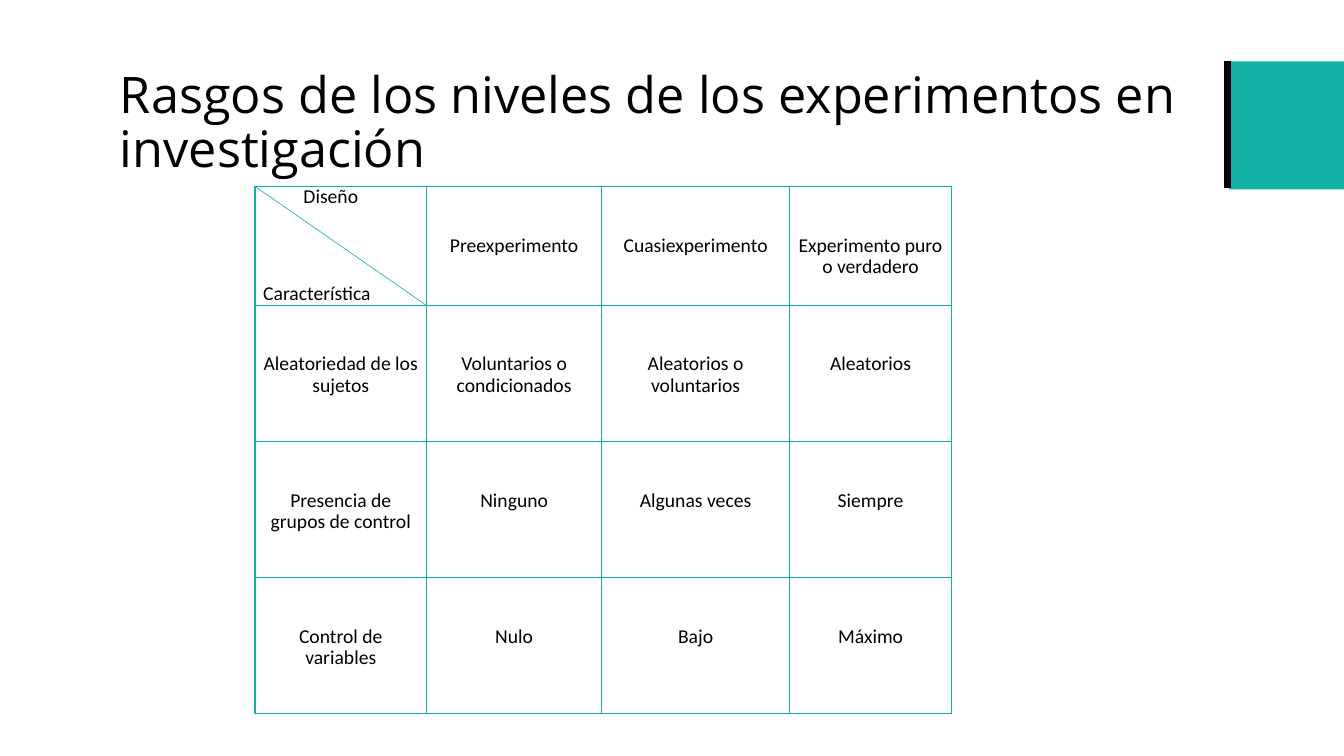
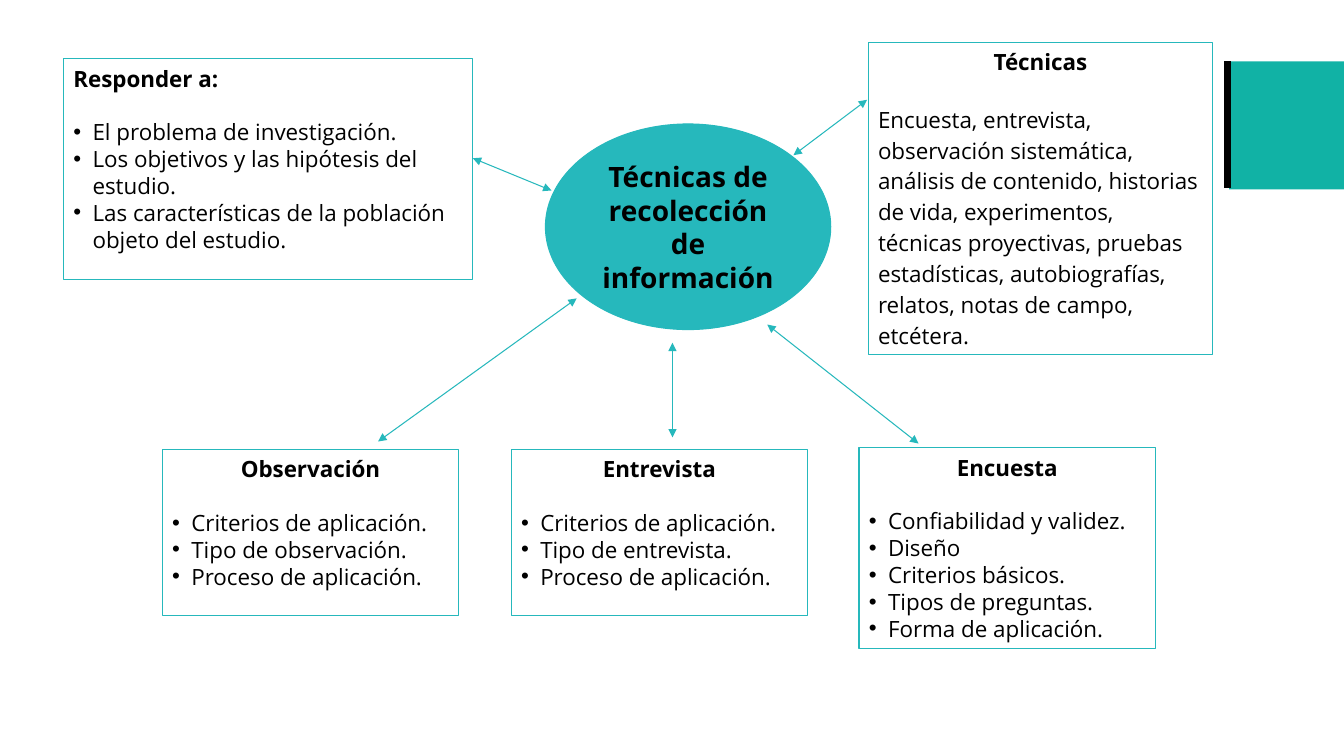
"""Build two slides on experiment levels and data collection techniques."""
from lxml.etree import SubElement as Sub
from pptx import Presentation
from pptx.dml.color import RGBColor as RGB
from pptx.enum.shapes import MSO_CONNECTOR as LINK, MSO_SHAPE as FORM
from pptx.enum.text import MSO_ANCHOR as ANCHOR, MSO_AUTO_SIZE as FIT, PP_ALIGN as ALIGN
from pptx.oxml.ns import qn
from pptx.util import Inches, Pt


class Theme:
    band = RGB(0x11, 0xB2, 0xA5)
    teal = RGB(0x26, 0xB8, 0xBC)
    black = RGB(0, 0, 0)
    main, grid = "Open Sans", "Calibri"
    title, hub, body, cell = Pt(36), Pt(20), Pt(16), Pt(14)
    thin, edge, bar = Pt(0.5), Pt(0.75), Pt(5)
    gap = Pt(19)
    hang = Inches(0.19)


def wire(slide, ends, color, width, heads=False):
    link = slide.shapes.add_connector(LINK.STRAIGHT, *map(Inches, ends))
    link.line.color.rgb = color
    link.line.width = width
    prop = link.element.spPr
    if heads:
        for tag in ("a:headEnd", "a:tailEnd"):
            Sub(prop.find(qn("a:ln")), qn(tag), type="triangle")
    Sub(prop, qn("a:effectLst"))


def style(para, text, size, name=Theme.main, bold=False, align=ALIGN.LEFT):
    para.text = text
    para.alignment = align
    para.font.name = name
    para.font.size = size
    para.font.bold = bold
    para.font.color.rgb = Theme.black


prs = Presentation()
prs.slide_width, prs.slide_height = Inches(13.33), Inches(7.5)
pages = [prs.slides.add_slide(prs.slide_layouts[n]) for n in (5, 6)]
for page in pages:
    band = page.shapes.add_shape(
        FORM.RECTANGLE, Inches(12.19), Inches(0.61), Inches(1.14), Inches(1.27))
    band.shadow.inherit = False
    band.fill.solid()
    band.fill.fore_color.rgb = Theme.band
    band.line.fill.background()
    wire(page, (12.17, 0.61, 12.17, 1.87), Theme.black, Theme.bar)
levels, methods = pages

title = levels.shapes.title
title.left, title.top = Inches(1.09), Inches(0.62)
title.width, title.height = Inches(10.9), Inches(1.22)
frame = title.text_frame
frame.auto_size = FIT.NONE
frame.vertical_anchor = ANCHOR.MIDDLE
style(frame.paragraphs[0],
      "Rasgos de los niveles de los experimentos en investigación", Theme.title)
frame.paragraphs[0].line_spacing = 0.9

rows = [
    ["Diseño", "Preexperimento", "Cuasiexperimento", "Experimento puro o verdadero"],
    ["Aleatoriedad de los sujetos", "Voluntarios o condicionados",
     "Aleatorios o voluntarios", "Aleatorios"],
    ["Presencia de grupos de control", "Ninguno", "Algunas veces", "Siempre"],
    ["Control de variables", "Nulo", "Bajo", "Máximo"],
]
widths = [1.7, 1.74, 1.86, 1.61]
heights = [1.18, 1.35, 1.35, 1.35]
table = levels.shapes.add_table(
    len(rows), len(widths), Inches(2.53), Inches(1.85),
    Inches(sum(widths)), Inches(sum(heights))).table
table.first_row = table.horz_banding = False
for col, width in zip(table.columns, widths):
    col.width = Inches(width)
for row, height, texts in zip(table.rows, heights, rows):
    row.height = Inches(height)
    for cell, text in zip(row.cells, texts):
        cell.margin_left = cell.margin_right = Inches(0.08)
        cell.margin_top, cell.margin_bottom = Inches(0.48), 0
        para = cell.text_frame.paragraphs[0]
        style(para, text, Theme.cell, Theme.grid, align=ALIGN.CENTER)
        para.line_spacing = 0.9
        prop = cell._tc.get_or_add_tcPr()
        for side in ("a:lnL", "a:lnR", "a:lnT", "a:lnB"):
            edge = Sub(prop, qn(side), w=str(Pt(1)))
            Sub(Sub(edge, qn("a:solidFill")), qn("a:srgbClr"), val=str(Theme.band))
        cell.fill.background()

corner = table.cell(0, 0)
corner.margin_top = 0
first = corner.text_frame.paragraphs[0]
first.alignment = ALIGN.LEFT
first._p.get_or_add_pPr().set("marL", str(Inches(0.4)))
last = corner.text_frame.add_paragraph()
style(last, "Característica", Theme.cell, Theme.grid)
last.line_spacing = 0.9
last.space_before = Pt(54)
wire(levels, (4.23, 3.03, 2.53, 1.85), Theme.teal, Theme.thin)

hub = methods.shapes.add_shape(
    FORM.OVAL, Inches(5.41), Inches(1.23), Inches(2.83), Inches(2.04))
hub.shadow.inherit = False
hub.fill.solid()
hub.fill.fore_color.rgb = hub.line.color.rgb = Theme.teal
hub.line.width = Theme.edge
hub.text_frame.word_wrap = True
hub.text_frame.vertical_anchor = ANCHOR.MIDDLE
style(hub.text_frame.paragraphs[0], "Técnicas de recolección de información",
      Theme.hub, bold=True, align=ALIGN.CENTER)

mid, left = ALIGN.CENTER, ALIGN.LEFT
boxes = [
    ((8.61, 0.42, 3.42, 3.1), 0.05, mid, "Técnicas", [
        "Encuesta, entrevista, observación sistemática, análisis de contenido, "
        "historias de vida, experimentos, técnicas proyectivas, pruebas "
        "estadísticas, autobiografías, relatos, notas de campo, etcétera."]),
    ((0.63, 0.58, 4.06, 2.19), 0.25, left, "Responder a:", [
        "El problema de investigación.",
        "Los objetivos y las hipótesis del estudio.",
        "Las características de la población objeto del estudio."]),
    ((8.52, 4.44, 2.94, 1.99), 0.05, mid, "Encuesta", [
        "Confiabilidad y validez.", "Diseño", "Criterios básicos.",
        "Tipos de preguntas.", "Forma de aplicación."]),
    ((1.61, 4.46, 2.94, 1.65), 0.25, mid, "Observación", [
        "Criterios de aplicación.", "Tipo de observación.", "Proceso de aplicación."]),
    ((5.07, 4.46, 2.94, 1.65), 0.25, mid, "Entrevista", [
        "Criterios de aplicación.", "Tipo de entrevista.", "Proceso de aplicación."]),
]
for area, foot, align, head, items in boxes:
    box = methods.shapes.add_shape(FORM.RECTANGLE, *map(Inches, area))
    box.shadow.inherit = False
    box.fill.background()
    box.line.color.rgb = Theme.teal
    box.line.width = Theme.edge
    frame = box.text_frame
    frame.word_wrap = True
    frame.vertical_anchor = ANCHOR.MIDDLE
    frame.margin_bottom = Inches(foot)
    style(frame.paragraphs[0], head, Theme.body, bold=True, align=align)
    frame.paragraphs[0].space_after = Theme.gap
    for item in items:
        para = frame.add_paragraph()
        if len(items) > 1:
            prop = para._p.get_or_add_pPr()
            prop.set("marL", str(Theme.hang))
            prop.set("indent", str(-Theme.hang))
            Sub(prop, qn("a:buFont"), typeface="Arial")
            Sub(prop, qn("a:buChar"), char="•")
        else:
            para.line_spacing = 1.15
        style(para, item, Theme.body)

for ends in [
    (5.47, 1.89, 4.69, 1.57),
    (6.67, 4.34, 6.67, 3.4),
    (7.61, 3.22, 9.11, 4.4),
    (7.87, 1.54, 8.6, 0.99),
    (5.72, 2.96, 3.75, 4.38),
]:
    wire(methods, ends, Theme.teal, Theme.edge, heads=True)

prs.save("out.pptx")
